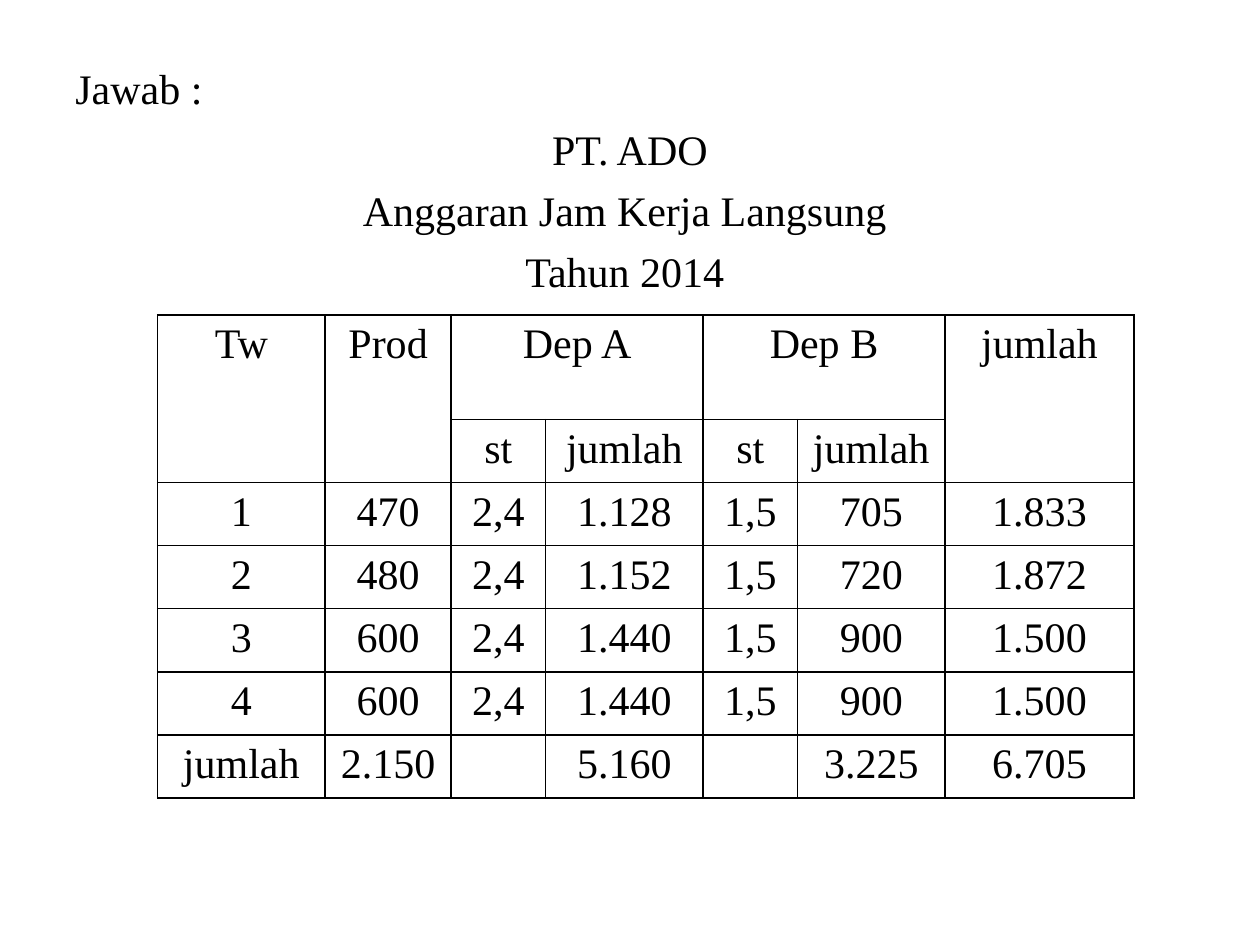
from lxml import etree
from pptx import Presentation
from pptx.dml.color import RGBColor
from pptx.enum import text
from pptx.oxml import ns
from pptx.util import Inches, Pt

COLORS = {"ink": "000000"}
FONT = "Times New Roman"
HEADING = ["PT. ADO", "Anggaran Jam Kerja Langsung ", "Tahun 2014 "]
COLUMN_WIDTHS = [1.33, 1, 0.75, 1.25, 0.75, 1.17, 1.5]
ROW_HEIGHTS = [0.83] + [0.47] * 6
BUDGET = [
    ["Tw", "Prod", "Dep A", "", "Dep B", "", "jumlah"],
    ["", "", "st", "jumlah", "st", "jumlah", ""],
    ["1", "470", "2,4", "1.128", "1,5", "705", "1.833"],
    ["2", "480", "2,4", "1.152", "1,5", "720", "1.872"],
    ["3", "600", "2,4", "1.440", "1,5", "900", "1.500"],
    ["4", "600", "2,4", "1.440", "1,5", "900", "1.500"],
    ["jumlah", "2.150", "", "5.160", "", "3.225", "6.705"],
]
MERGES = [(0, 0, 1, 0), (0, 1, 1, 1), (0, 2, 0, 3), (0, 4, 0, 5), (0, 6, 1, 6)]


def add_words(paragraph, words, alignment=text.PP_ALIGN.CENTER):
    paragraph.alignment = alignment
    run = paragraph.add_run()
    run.text = words
    run.font.name = FONT
    run.font.size = Pt(24)
    run.font.color.rgb = RGBColor.from_string(COLORS["ink"])


def add_borders(cell):
    properties = cell._tc.get_or_add_tcPr()
    for position, side in enumerate(("lnL", "lnR", "lnT", "lnB")):
        line = etree.Element(ns.qn(f"a:{side}"), w=str(Pt(1)))
        fill = etree.SubElement(line, ns.qn("a:solidFill"))
        etree.SubElement(fill, ns.qn("a:srgbClr"), val=COLORS["ink"])
        properties.insert(position, line)


def add_heading(slide, left, top, width, height):
    box = slide.shapes.add_textbox(Inches(left), Inches(top), Inches(width), Inches(height))
    frame = box.text_frame
    frame.word_wrap = True
    add_words(frame.paragraphs[0], "Jawab :", text.PP_ALIGN.LEFT)
    for words in HEADING:
        paragraph = frame.add_paragraph()
        paragraph.space_before = Pt(6)
        add_words(paragraph, words)


def add_budget(slide, left, top, width, height):
    table = slide.shapes.add_table(
        len(ROW_HEIGHTS), len(COLUMN_WIDTHS),
        Inches(left), Inches(top), Inches(width), Inches(height),
    ).table
    table.first_row = False
    table.horz_banding = False
    for column, column_width in zip(table.columns, COLUMN_WIDTHS):
        column.width = Inches(column_width)
    for row, row_height in zip(table.rows, ROW_HEIGHTS):
        row.height = Inches(row_height)
    for row, entries in zip(table.rows, BUDGET):
        for cell, entry in zip(row.cells, entries):
            cell.fill.background()
            add_borders(cell)
            if entry:
                add_words(cell.text_frame.paragraphs[0], entry)
    for first_row, first_column, last_row, last_column in MERGES:
        table.cell(first_row, first_column).merge(table.cell(last_row, last_column))


def main():
    deck = Presentation()
    deck.slide_width, deck.slide_height = Inches(10), Inches(7.5)
    slide = deck.slides.add_slide(deck.slide_layouts[6])
    add_heading(slide, 0.5, 0.45, 9, 6.25)
    add_budget(slide, 1.25, 2.5, sum(COLUMN_WIDTHS), sum(ROW_HEIGHTS))
    deck.save("out.pptx")


if __name__ == "__main__":
    main()
